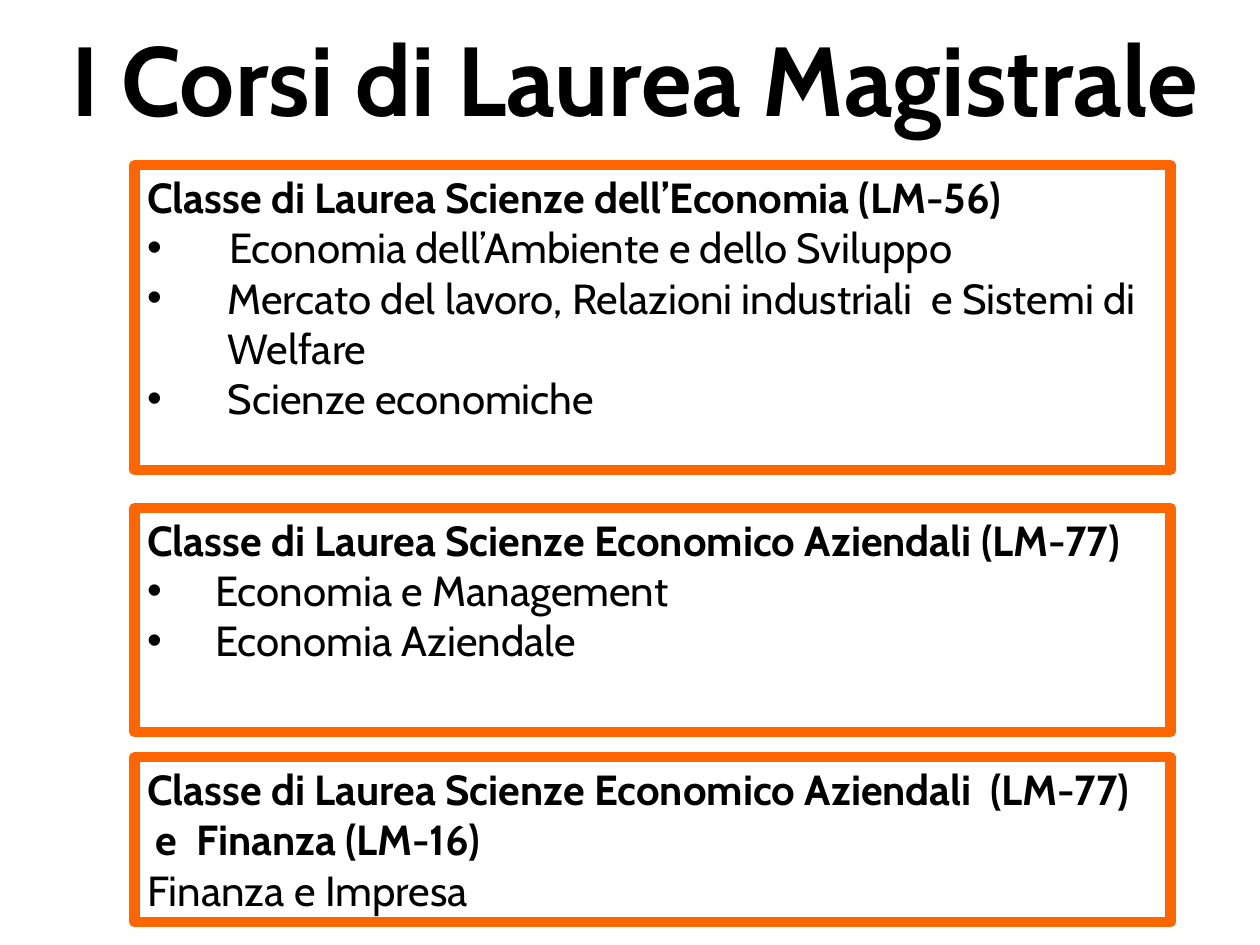
from dataclasses import dataclass

from lxml import etree
from pptx import Presentation
from pptx.dml.color import RGBColor
from pptx.enum import shapes, text
from pptx.oxml import ns
from pptx.util import Pt

FONT = "Cabin"
BLACK, WHITE, ORANGE = "000000", "FFFFFF", "FF6600"
LEFT, WIDTH = 77, 592


@dataclass
class Line:
    words: str
    bold: bool = False
    indent: float = 0
    bullet: bool = False


@dataclass
class Panel:
    top: float
    height: float
    lines: list[Line]


PANELS = [
    Panel(94.3, 174.2, [
        Line("Classe di Laurea Scienze dell’Economia (LM-56)", bold=True),
        Line("Economia dell’Ambiente e dello Sviluppo", indent=47, bullet=True),
        Line("Mercato del lavoro, Relazioni industriali  e Sistemi di Welfare",
             indent=46, bullet=True),
        Line("Scienze economiche", indent=46, bullet=True),
    ]),
    Panel(290.2, 128.2, [
        Line("Classe di Laurea Scienze Economico Aziendali (LM-77)", bold=True),
        Line("Economia e Management", indent=39, bullet=True),
        Line("Economia Aziendale", indent=39, bullet=True),
    ]),
    Panel(432.7, 94.3, [
        Line("Classe di Laurea Scienze Economico Aziendali  (LM-77)", bold=True),
        Line("e  Finanza (LM-16)", bold=True, indent=5),
        Line("Finanza e Impresa"),
    ]),
]


def color(code: str) -> RGBColor:
    return RGBColor.from_string(code)


def set_all(item, values: dict) -> None:
    for name, value in values.items():
        setattr(item, name, value)


def indent(para, line: Line) -> None:
    """Set the left margin, with a hanging bullet where one is wanted."""
    props = para._p.get_or_add_pPr()
    props.set("marL", str(Pt(line.indent)))
    props.set("indent", str(-Pt(line.indent) if line.bullet else 0))
    if line.bullet:
        etree.SubElement(props, ns.qn("a:buFont")).set("typeface", "Arial")
        etree.SubElement(props, ns.qn("a:buChar")).set("char", "•")


def write(frame, lines: list[Line], size: float) -> None:
    set_all(frame, {"word_wrap": True, "vertical_anchor": text.MSO_ANCHOR.TOP})
    for i, line in enumerate(lines):
        para = frame.paragraphs[0] if i == 0 else frame.add_paragraph()
        para.alignment = text.PP_ALIGN.LEFT
        indent(para, line)
        run = para.add_run()
        run.text = line.words
        set_all(run.font, {"name": FONT, "size": Pt(size), "bold": line.bold})
        run.font.color.rgb = color(BLACK)


def draw(slide, panel: Panel) -> None:
    box = slide.shapes.add_shape(
        shapes.MSO_SHAPE.RECTANGLE,
        Pt(LEFT), Pt(panel.top), Pt(WIDTH), Pt(panel.height))
    box.shadow.inherit = False
    box.fill.solid()
    box.fill.fore_color.rgb = color(WHITE)
    box.line.color.rgb = color(ORANGE)
    box.line.width = Pt(6)
    write(box.text_frame, panel.lines, 24)


def main() -> None:
    deck = Presentation()
    set_all(deck, {"slide_width": Pt(720), "slide_height": Pt(540)})
    slide = deck.slides.add_slide(deck.slide_layouts[6])
    title = slide.shapes.add_textbox(Pt(33.8), Pt(7.2), Pt(723.6), Pt(77.8))
    write(title.text_frame, [Line("I Corsi di Laurea Magistrale", bold=True)], 56)
    for panel in PANELS:
        draw(slide, panel)
    deck.save("out.pptx")


if __name__ == "__main__":
    main()
